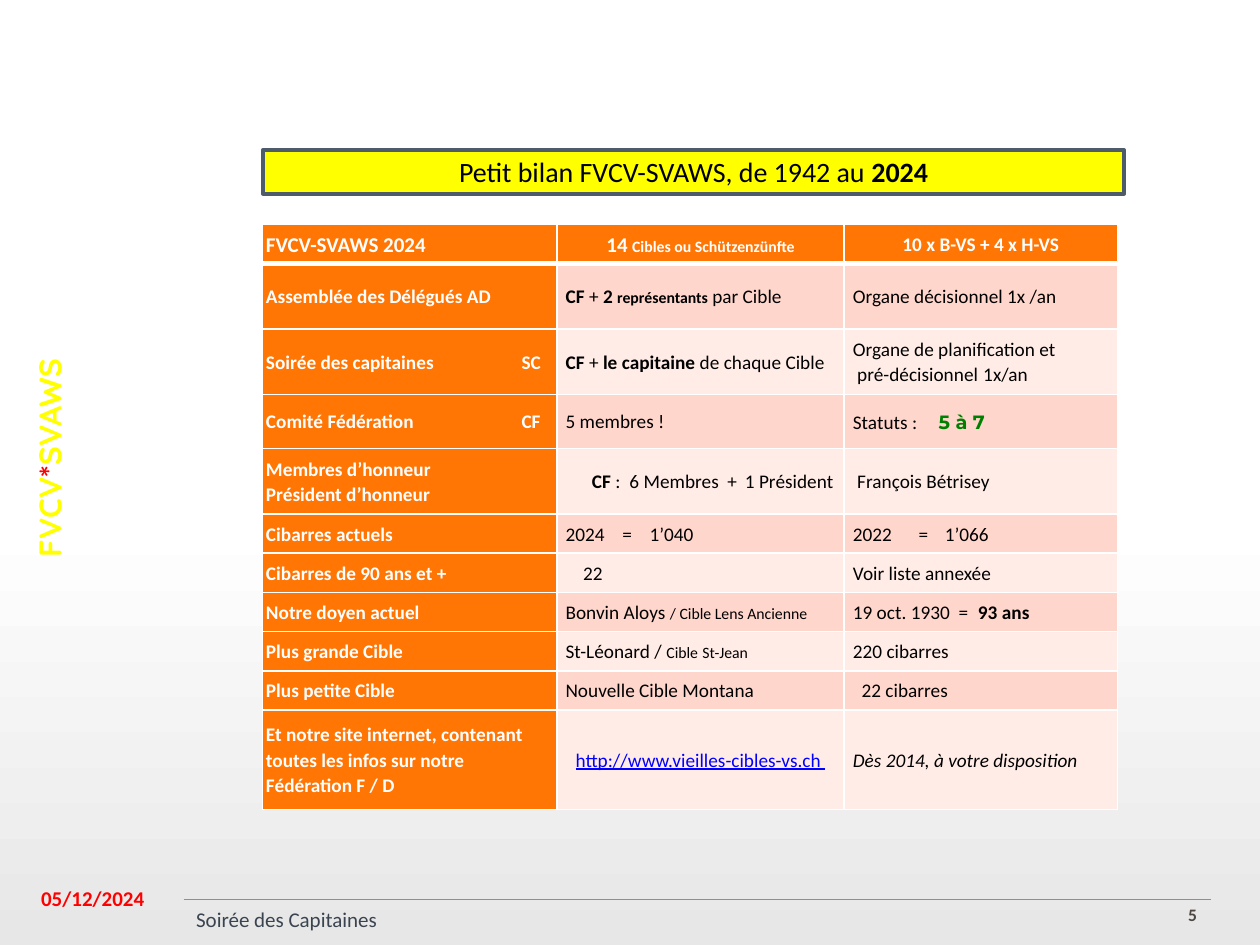
from copy import deepcopy
from dataclasses import dataclass
from lxml import etree
from pptx import Presentation
from pptx.dml import color
from pptx.enum import shapes, text
from pptx.oxml import ns
from pptx.util import Pt


@dataclass
class Theme:
    font: str = "Calibri"
    side_font: str = "Quicksand"
    accent_font: str = "Montserrat"
    white: str = "FFFFFF"
    black: str = "000000"
    grey: str = "E7E7E7"
    yellow: str = "FFFF00"
    red: str = "FF0000"
    green: str = "008000"
    link: str = "0000FF"
    rule: str = "FE7300"
    orange: str = "FF7605"
    band_dark: str = "FFD6CC"
    band_light: str = "FFECE7"
    frame: str = "4D5B6B"
    footer: str = "3A4450"
    number: str = "4D4643"
    side: int = 18
    title: int = 16
    head: int = 12
    body: int = 11
    page: int = 10
    small: int = 9


T = Theme()
rgb = color.RGBColor.from_string
LEFT, CENTER = text.PP_ALIGN.LEFT, text.PP_ALIGN.CENTER
MIDDLE, TOP = text.MSO_ANCHOR.MIDDLE, text.MSO_ANCHOR.TOP


def add_run(p, words, size, fill, bold=False, font=T.font, italic=False, underline=False):
    r = p.add_run()
    r.text = words
    f = r.font
    f.name, f.size, f.bold = font, Pt(size), bold
    f.italic, f.underline = italic, underline
    f.color.rgb = rgb(fill)
    return r


def add_line(parent, tag, width, fill):
    ln = etree.SubElement(parent, ns.qn(tag), w=str(Pt(width)))
    solid = etree.SubElement(ln, ns.qn("a:solidFill"))
    etree.SubElement(solid, ns.qn("a:srgbClr"), val=fill)
    return ln


prs = Presentation()
prs.slide_width, prs.slide_height = Pt(720), Pt(540)
s = prs.slides.add_slide(prs.slide_layouts[6])

# Background: white, fading to grey in the lower half
bg = s.background.fill
bg.gradient()
bg.gradient_angle = 270
stops = s.element.find(".//" + ns.qn("a:gsLst"))
stops.insert(1, deepcopy(stops[0]))
for stop, (pos, c) in zip(bg.gradient_stops, [(0, T.white), (0.55, T.white), (1, T.grey)]):
    stop.position = pos
    stop.color.rgb = rgb(c)

# Footer rule
rule = s.shapes.add_connector(shapes.MSO_CONNECTOR.STRAIGHT, Pt(105), Pt(514), Pt(692), Pt(514))
rule.line.color.rgb = rgb(T.rule)
rule.line.width = Pt(0.75)
etree.SubElement(rule._element.spPr, ns.qn("a:effectLst"))

# Vertical name on the left edge
sp = s.shapes.add_textbox(Pt(13.7), Pt(196.5), Pt(36), Pt(130.5))
tf = sp.text_frame
tf.word_wrap = False
tf.auto_size = text.MSO_AUTO_SIZE.SHAPE_TO_FIT_TEXT
tf._txBody.bodyPr.set("vert", "vert270")
p = tf.paragraphs[0]
p.alignment = CENTER
for words, c in [("FVCV", T.yellow), ("*", T.red), ("SVAWS", T.yellow)]:
    r = add_run(p, words, T.side, c, True, T.side_font)
    rPr = r._r.get_or_add_rPr()
    rPr.insert(0, add_line(rPr, "a:ln", 0.15, T.red))

# Footer, date and slide number
for box, words, size, c, bold, align, anchor in [
    ((105, 516.2, 558.7, 18), "Soirée des Capitaines", T.head, T.footer, False, LEFT, MIDDLE),
    ((13, 502.5, 80, 18), "05/12/2024", T.head, T.red, True, CENTER, TOP),
    ((671.8, 508.3, 30.2, 28.8), "5", T.page, T.number, True, LEFT, MIDDLE),
]:
    sp = s.shapes.add_textbox(*map(Pt, box))
    tf = sp.text_frame
    tf.word_wrap = True
    tf.vertical_anchor = anchor
    p = tf.paragraphs[0]
    p.alignment = align
    add_run(p, words, size, c, bold)

# Table content: a cell is a list of paragraphs, each a tuple
# (runs, tab stops, left indent); a run is (words, changes to the cell's default)
B, R, S = {"bold": True}, {"bold": False}, {"size": T.small}
H = {"size": T.head}
SB = {"size": T.small, "bold": True}
GREEN = {"font": T.accent_font, "fill": T.green, "bold": True}
LINK = {"fill": T.link, "underline": True}


def para(*runs, tabs=(), indent=0):
    return [(r, {}) if isinstance(r, str) else r for r in runs], tabs, indent


rows = [
    (22.3, [para(("FVCV-SVAWS 2024", H))],
     [para(("14", H), " ", ("Cibles ou Schützenzünfte", S))],
     [para("10 x B-VS + 4 x H-VS")]),
    (37.4, [para("Assemblée des Délégués AD")],
     [para(("CF", B), " + ", ("2 ", B), ("représentants", SB), " par Cible")],
     [para("Organe décisionnel 1x /an")]),
    (37.4, [para("Soirée des capitaines\tSC", tabs=[146])],
     [para(("CF ", B), "+ ", ("le capitaine ", B), "de chaque Cible")],
     [para("Organe de planification et"), para("pré-décisionnel\t1x/an", tabs=[79], indent=2.5)]),
    (31, [para("Comité Fédération\tCF", tabs=[146])],
     [para("5 membres !")],
     [para("Statuts :\t", ("5 à 7", GREEN), tabs=[49])]),
    (37.4, [para("Membres d’honneur"), para("Président d’honneur")],
     [para("\t", ("CF", B), " :\t6 Membres\t+\t1 Président", tabs=[15, 36.5, 92.5, 102.5])],
     [para("François Bétrisey", indent=2.5)]),
    (22.4, [para("Cibarres actuels")],
     [para("2024\t=\t1’040", tabs=[32.5, 48])],
     [para("2022\t=\t1’066", tabs=[37.5, 52.5])]),
    (22.4, [para("Cibarres de 90 ans et +")],
     [para("22", indent=10)], [para("Voir liste annexée")]),
    (22.4, [para("Notre doyen actuel")],
     [para("Bonvin Aloys ", ("/ Cible Lens Ancienne", S))],
     [para("19 oct. 1930\t=\t", ("93 ans", B), tabs=[60.5, 71.5])]),
    (22.4, [para("Plus grande Cible")],
     [para("St-Léonard / ", ("Cible", S), " ", ("St-Jean", S))],
     [para("220 cibarres")]),
    (22.4, [para("Plus petite Cible")],
     [para("Nouvelle Cible Montana")], [para("22 cibarres", indent=5)]),
    (56.8, [para("Et notre site internet, contenant toutes les infos sur notre Fédération F / D")],
     [para(("http://www.vieilles-cibles-vs.ch ", LINK))],
     [para(("Dès 2014, à votre disposition", {"italic": True}))]),
]

# Table
widths = [168.2, 164.2, 156.2]
table = s.shapes.add_table(len(rows), 3, Pt(150), Pt(128.3), Pt(sum(widths)), Pt(334)).table
for col, w in zip(table.columns, widths):
    col.width = Pt(w)
for i, (height, *cells) in enumerate(rows):
    table.rows[i].height = Pt(height)
    for j, paragraphs in enumerate(cells):
        cell = table.cell(i, j)
        strong = i == 0 or j == 0
        cell.vertical_anchor = MIDDLE
        cell.margin_left = cell.margin_right = Pt(2 if strong else 5)
        cell.margin_top = cell.margin_bottom = Pt(0 if strong else 2.6)
        tcPr = cell._tc.get_or_add_tcPr()
        for side in "LRTB":
            thick = (i == 0 and side == "B") or (i == 1 and side == "T")
            add_line(tcPr, "a:ln" + side, 3 if thick else 1, T.white)
        cell.fill.solid()
        band = T.band_dark if i % 2 else T.band_light
        if i == len(rows) - 1:
            band = T.band_light
        cell.fill.fore_color.rgb = rgb(T.orange if strong else band)
        for k, (runs, tabs, indent) in enumerate(paragraphs):
            p = cell.text_frame.paragraphs[0] if k == 0 else cell.text_frame.add_paragraph()
            centred = j > 0 and i == 0 or j == 1 and i == len(rows) - 1
            p.alignment = CENTER if centred else LEFT
            p.line_spacing = 1.07
            pPr = p._p.get_or_add_pPr()
            if indent:
                pPr.set("marL", str(Pt(indent)))
                pPr.set("indent", "0")
            if tabs:
                tab_list = etree.SubElement(pPr, ns.qn("a:tabLst"))
                for t in tabs:
                    etree.SubElement(tab_list, ns.qn("a:tab"), pos=str(Pt(t)), algn="l")
            base = {"size": T.body, "fill": T.white if strong else T.black, "bold": strong}
            for words, changes in runs:
                add_run(p, words, **{**base, **changes})

# Title banner
sp = s.shapes.add_shape(shapes.MSO_SHAPE.RECTANGLE, Pt(150.3), Pt(85.7), Pt(492), Pt(25))
sp.shadow.inherit = False
sp.fill.solid()
sp.fill.fore_color.rgb = rgb(T.yellow)
sp.line.color.rgb = rgb(T.frame)
sp.line.width = Pt(2.25)
tf = sp.text_frame
tf.word_wrap = True
tf.auto_size = text.MSO_AUTO_SIZE.SHAPE_TO_FIT_TEXT
tf.vertical_anchor = MIDDLE
tf.margin_left = tf.margin_right = Pt(5)
tf.margin_top = tf.margin_bottom = Pt(2.6)
p = tf.paragraphs[0]
p.alignment = CENTER
add_run(p, "Petit bilan FVCV-SVAWS, de 1942 au ", T.title, T.black)
add_run(p, "2024", T.title, T.black, True)

prs.save("out.pptx")
